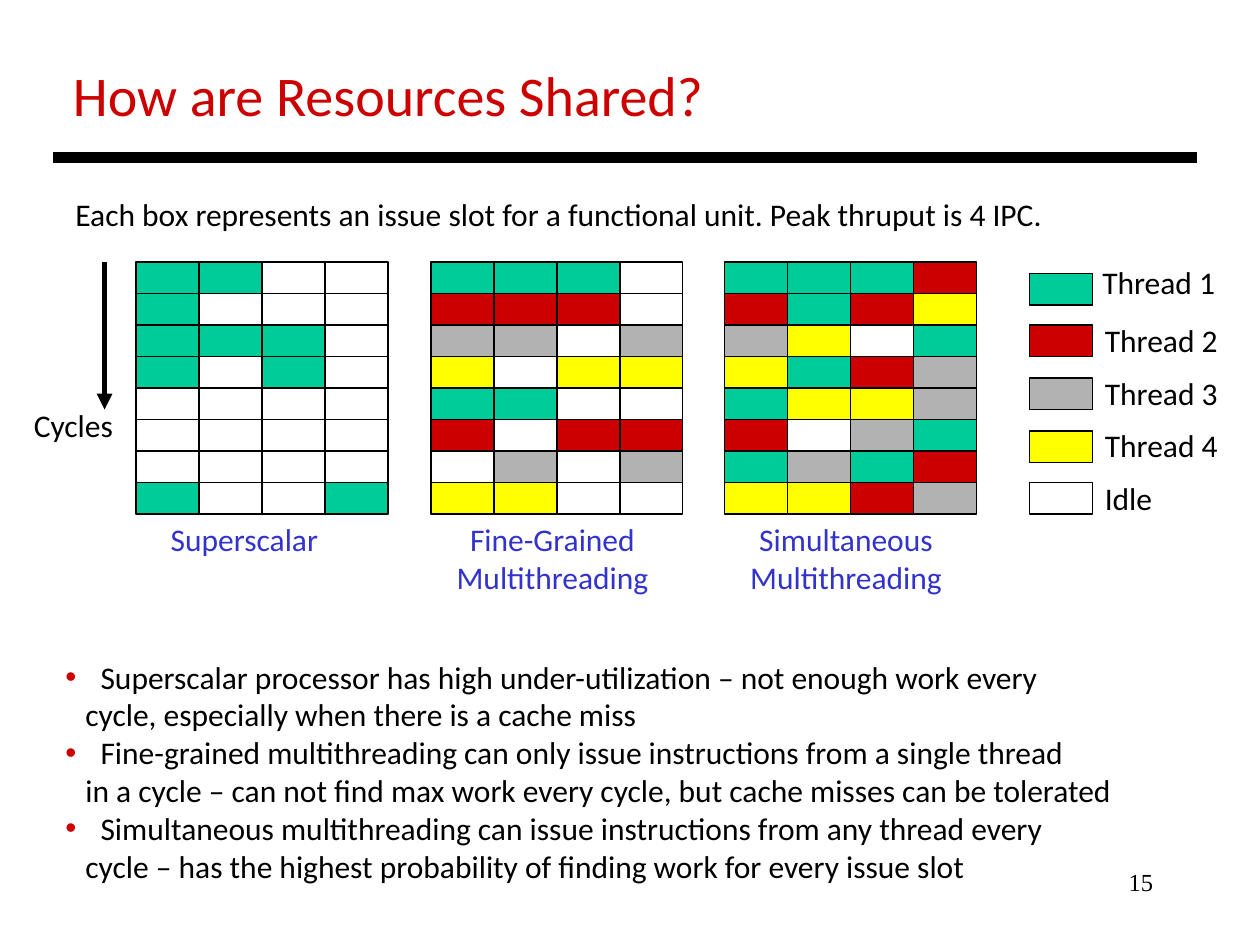
from lxml import etree
from pptx import Presentation
from pptx.dml.color import RGBColor
from pptx.enum.shapes import MSO_CONNECTOR as Connector, MSO_SHAPE as Shape
from pptx.enum.text import PP_ALIGN as Align
from pptx.oxml.ns import qn
from pptx.util import Inches, Pt

COLORS = {
    "black": "000000", "white": "FFFFFF", "red": "CC0000", "green": "00CC99",
    "gray": "B2B2B2", "yellow": "FFFF00", "blue": "3333CC",
}
# Thread number in each issue slot; a dot is an idle slot.
SLOT_COLORS = {"1": "green", "2": "red", "3": "gray", "4": "yellow", ".": "white"}
SLOT_WIDTH, SLOT_HEIGHT = 0.5, 0.25
GRID_TOP = 2.08

GRIDS = [
    (1.08, "11.. 1... 111. 1.1. .... .... .... 1..1"),
    (3.42, "111. 222. 33.3 4.44 11.. 2.22 .3.3 44.."),
    (5.75, "1112 2124 34.1 4123 1443 2.31 1312 4423"),
]
CAPTIONS = [
    (1.25, 1.38, 0.4, "Superscalar"),
    (3.5, 1.77, 0.7, "Fine-Grained\nMultithreading"),
    (5.83, 1.77, 0.7, "Simultaneous\nMultithreading"),
]
LEGEND = [
    ("1", 2.17, "Thread 1", 8.65, 2.04, 1.11),
    ("2", 2.58, "Thread 2", 8.67, 2.5, 1.11),
    ("3", 3, "Thread 3", 8.67, 2.92, 1.11),
    ("4", 3.42, "Thread 4", 8.67, 3.33, 1.11),
    (".", 3.83, "Idle", 8.67, 3.75, 0.6),
]
POINTS = [
    ("Superscalar processor has high under-utilization – not enough work every",
     "cycle, especially when there is a cache miss"),
    ("Fine-grained multithreading can only issue instructions from a single thread",
     "in a cycle – can not find max work every cycle, but cache misses can be tolerated"),
    ("Simultaneous multithreading can issue instructions from any thread every",
     "cycle – has the highest probability of finding work for every issue slot"),
]


def color(name):
    return RGBColor.from_string(COLORS[name])


class SlidePainter:
    """Holds the text style and the slide being drawn; lengths are in inches."""

    def __init__(self, slide, font="Calibri", size=18):
        self.shapes = slide.shapes
        self.font = font
        self.size = size

    def text(self, left, top, width, height, words, ink="black", size=None,
             font=None, align=Align.LEFT, wrap=False):
        box = self.shapes.add_textbox(
            Inches(left), Inches(top), Inches(width), Inches(height))
        frame = box.text_frame
        frame.text = words
        frame.word_wrap = wrap
        for para in frame.paragraphs:
            para.alignment = align
            for span in para.runs:
                span.font.name = font or self.font
                span.font.size = Pt(size or self.size)
                span.font.color.rgb = color(ink)
        return frame

    def slot(self, left, top, thread):
        box = self.shapes.add_shape(
            Shape.RECTANGLE, Inches(left), Inches(top),
            Inches(SLOT_WIDTH), Inches(SLOT_HEIGHT))
        box.shadow.inherit = False
        box.fill.solid()
        box.fill.fore_color.rgb = color(SLOT_COLORS[thread])
        box.line.color.rgb = color("black")
        box.line.width = Pt(0.75)

    def grid(self, left, top, pattern):
        for row, threads in enumerate(pattern.split()):
            for column, thread in enumerate(threads):
                self.slot(left + column * SLOT_WIDTH, top + row * SLOT_HEIGHT, thread)

    def line(self, start, end, weight, arrow=False):
        line = self.shapes.add_connector(
            Connector.STRAIGHT, *(Inches(value) for value in (*start, *end)))
        line.line.color.rgb = color("black")
        line.line.width = Pt(weight)
        if arrow:
            etree.SubElement(line.line._get_or_add_ln(), qn("a:tailEnd"), type="triangle")
        etree.SubElement(line._element.spPr, qn("a:effectLst"))

    def bullets(self, left, top, width, height, points):
        """Each point is a bulleted line and an indented second line."""
        lines = [line for point in points for line in point]
        frame = self.text(left, top, width, height, "\n".join(lines))
        for index, para in enumerate(frame.paragraphs):
            properties = para._p.get_or_add_pPr()
            if index % 2:
                properties.set("marL", str(Inches(0.16)))
                properties.set("indent", "0")
                continue
            properties.set("marL", str(Inches(0.28)))
            properties.set("indent", str(Inches(-0.28)))
            bullet_color = etree.SubElement(properties, qn("a:buClr"))
            etree.SubElement(bullet_color, qn("a:srgbClr"), val=COLORS["red"])
            etree.SubElement(properties, qn("a:buFont"), typeface="Arial")
            etree.SubElement(properties, qn("a:buChar"), char="•")


def main():
    deck = Presentation()
    deck.slide_width, deck.slide_height = Inches(10), Inches(7.5)
    painter = SlidePainter(deck.slides.add_slide(deck.slide_layouts[6]))

    painter.text(7.17, 6.83, 2.08, 0.5, "15", size=14, font="Times New Roman",
                 align=Align.RIGHT, wrap=True)
    painter.text(0.48, 0.43, 5.25, 0.64, "How are Resources Shared?", "red", 32)
    painter.line((0.42, 1.25), (9.5, 1.25), 6)
    painter.text(0.5, 1.5, 7.97, 0.4, "Each box represents an issue slot for a "
                 "functional unit. Peak thruput is 4 IPC.")

    for left, pattern in GRIDS:
        painter.grid(left, GRID_TOP, pattern)
    painter.line((0.83, GRID_TOP), (0.83, 3.25), 3, arrow=True)
    painter.text(0.17, 3.17, 0.84, 0.4, "Cycles")
    for left, width, height, caption in CAPTIONS:
        painter.text(left, 4.08, width, height, caption, "blue", align=Align.CENTER)

    for thread, top, label, label_left, label_top, label_width in LEGEND:
        painter.slot(8.17, top, thread)
        painter.text(label_left, label_top, label_width, 0.4, label)

    painter.bullets(0.42, 5.17, 8.56, 1.92, POINTS)
    deck.save("out.pptx")


if __name__ == "__main__":
    main()
